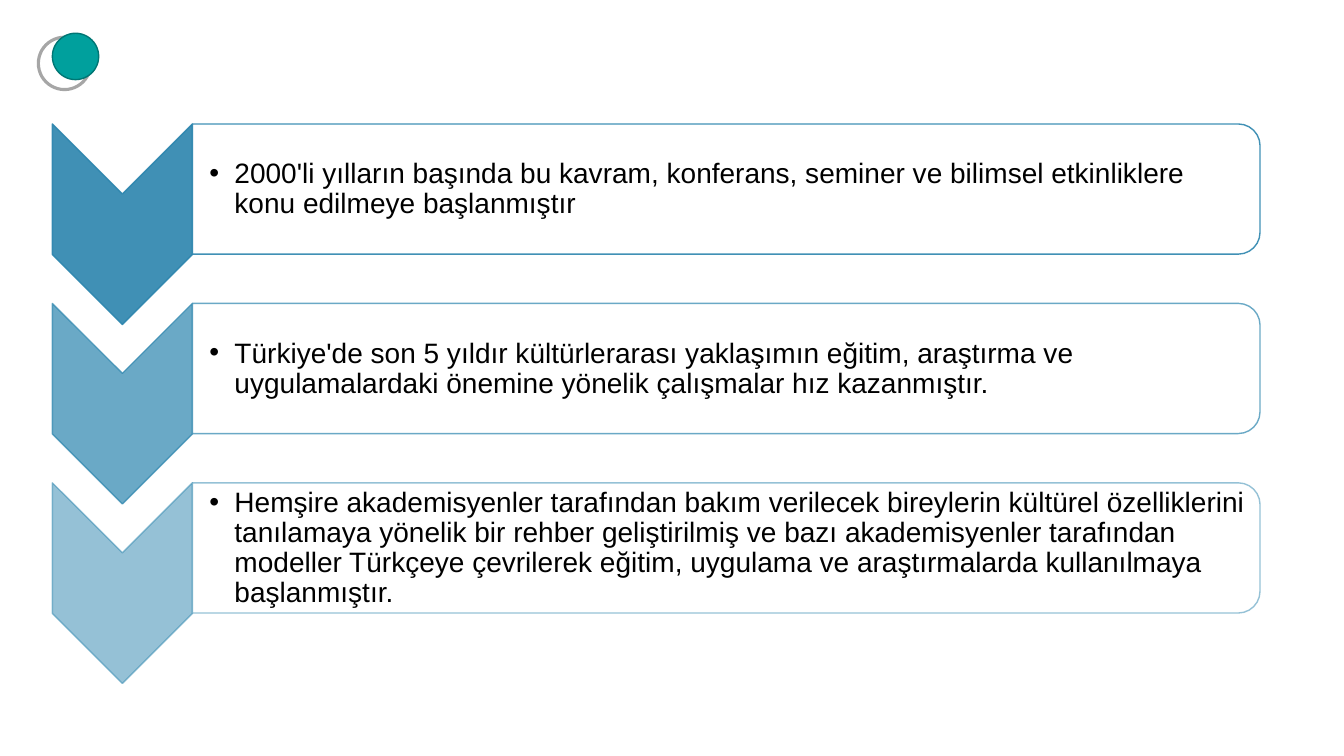
from dataclasses import dataclass

from lxml import etree
from pptx import Presentation
from pptx.dml.color import RGBColor
from pptx.enum.shapes import MSO_SHAPE
from pptx.enum.text import MSO_ANCHOR, PP_ALIGN
from pptx.oxml.ns import qn
from pptx.util import Inches, Pt

OVAL = MSO_SHAPE.OVAL
CHEVRON = MSO_SHAPE.CHEVRON
CARD = MSO_SHAPE.ROUND_2_SAME_RECTANGLE
MIDDLE = MSO_ANCHOR.MIDDLE
LEFT = PP_ALIGN.LEFT

COLS = 96  # square cells: 96 columns by 54 rows
FIRST, PITCH = 8.86, 12.82
STEPS = [
    (90, "2000'li yılların başında bu kavram, konferans, seminer ve bilimsel "
         "etkinliklere konu edilmeye başlanmıştır"),
    (70, "Türkiye'de son 5 yıldır kültürlerarası yaklaşımın eğitim, araştırma "
         "ve uygulamalardaki önemine yönelik çalışmalar hız kazanmıştır."),
    (50, "Hemşire akademisyenler tarafından bakım verilecek bireylerin kültürel "
         "özelliklerini tanılamaya yönelik bir rehber geliştirilmiş ve bazı "
         "akademisyenler tarafından modeller Türkçeye çevrilerek eğitim, "
         "uygulama ve araştırmalarda kullanılmaya başlanmıştır."),
]


@dataclass(frozen=True)
class Theme:
    font: str = "Arial"
    body: int = 20
    ink: str = "000000"
    paper: str = "FFFFFF"
    blue: str = "2C85AE"
    teal: str = "00A09D"
    edge: str = "007674"
    ring: str = "A6A6A6"


class Board:
    def __init__(self, deck, theme):
        self.theme = theme
        self.slide = deck.slides.add_slide(deck.slide_layouts[6])
        self.cell = deck.slide_width / COLS

    def grid(self, *cells):
        return [round(n * self.cell) for n in cells]

    def tint(self, fill, color, alpha):
        """Fill with a solid colour at the given percentage of opacity."""
        fill.solid()
        fill.fore_color.rgb = RGBColor.from_string(color)
        if alpha < 100:
            for node in fill._xPr.iter(qn("a:srgbClr")):
                etree.SubElement(node, qn("a:alpha"), val=str(alpha * 1000))

    def shape(self, kind, box, fill, line, width=1, fade=(100, 100)):
        item = self.slide.shapes.add_shape(kind, *self.grid(*box))
        item.shadow.inherit = False
        if fill:
            self.tint(item.fill, fill, fade[0])
        else:
            item.fill.background()
        item.line.width = Pt(width)
        self.tint(item.line.fill, line, fade[1])
        return item

    def turned(self, kind, box, fill, line, fade):
        """Add a shape turned by 90 degrees that covers the box as seen."""
        x, y, w, h = box
        shift = (w - h) / 2
        item = self.shape(kind, (x + shift, y - shift, h, w), fill, line,
                          fade=fade)
        item.rotation = 90

    def bullet(self, box, text):
        frame = self.slide.shapes.add_textbox(*self.grid(*box)).text_frame
        frame.word_wrap = True
        frame.vertical_anchor = MIDDLE
        frame.margin_left = Inches(0.16)
        frame.margin_right = frame.margin_top = frame.margin_bottom = Inches(0.01)
        para = frame.paragraphs[0]
        para.alignment = LEFT
        para.line_spacing = 0.9
        props = para._p.get_or_add_pPr()
        props.set("marL", str(Inches(0.25)))
        props.set("indent", str(-Inches(0.25)))
        etree.SubElement(props, qn("a:buFont"), typeface=self.theme.font)
        etree.SubElement(props, qn("a:buChar"), char="•")
        run = para.add_run()
        run.text = text
        run.font.name = self.theme.font
        run.font.size = Pt(self.theme.body)
        run.font.color.rgb = RGBColor.from_string(self.theme.ink)

    def step(self, top, alpha, text):
        blue, paper = self.theme.blue, self.theme.paper
        self.turned(CHEVRON, (3.74, top, 10, 14.33), blue, blue, (alpha, alpha))
        self.turned(CARD, (13.75, top, 76.25, 9.3), paper, blue, (90, alpha))
        self.bullet((13.8, top + 0.48, 75.8, 8.42), text)


def main():
    deck = Presentation()
    deck.slide_width, deck.slide_height = Inches(13.33), Inches(7.5)
    theme = Theme()
    board = Board(deck, theme)
    board.shape(OVAL, (2.74, 2.66, 3.74, 3.74), None, theme.ring, 2.25)
    board.shape(OVAL, (3.74, 2.38, 3.31, 3.31), theme.teal, theme.edge)
    for row, (alpha, text) in enumerate(STEPS):
        board.step(FIRST + row * PITCH, alpha, text)
    deck.save("out.pptx")


if __name__ == "__main__":
    main()
